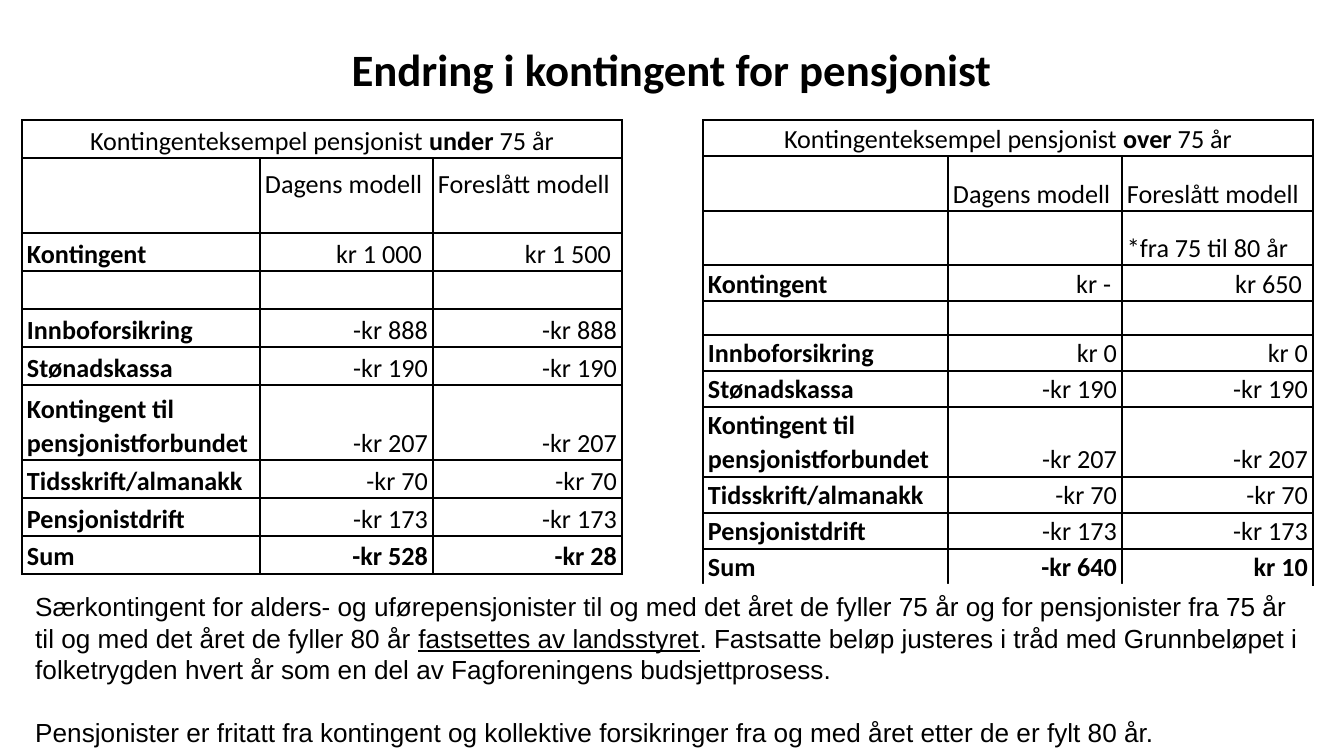
import pptx
import pptx.util
import pptx.dml.color
import pptx.enum.shapes
import pptx.enum.text
import lxml.etree

PX = 914400 / 134.4
ALIGN = pptx.enum.text.PP_ALIGN
ANCHOR = pptx.enum.text.MSO_ANCHOR
BLACK = "000000"
WHITE = "FFFFFF"
NAMESPACE = "{http://schemas.openxmlformats.org/drawingml/2006/main}"


def color(value):
    return pptx.dml.color.RGBColor.from_string(value)


def add_run(paragraph, text, size=14, font="Calibri", bold=False, underline=False):
    run = paragraph.add_run()
    run.text = text
    run.font.size = pptx.util.Pt(size)
    run.font.name = font
    run.font.bold = bold
    run.font.underline = underline
    run.font.color.rgb = color(BLACK)


presentation = pptx.Presentation()
presentation.slide_width = round(1344 * PX)
presentation.slide_height = round(756 * PX)
slide = presentation.slides.add_slide(presentation.slide_layouts[5])

title = slide.shapes.title
title.left, title.top, title.width, title.height = [round(n * PX) for n in (243, 35, 857, 67)]
title.text_frame.vertical_anchor = ANCHOR.MIDDLE
paragraph = title.text_frame.paragraphs[0]
paragraph.alignment = ALIGN.CENTER
add_run(paragraph, "Endring i kontingent for pensjonist", size=24, bold=True)

shared_rows = [
    ["Stønadskassa", "-kr 190", "-kr 190"],
    ["Kontingent til pensjonistforbundet", "-kr 207", "-kr 207"],
    ["Tidsskrift/almanakk", "-kr 70", "-kr 70"],
    ["Pensjonistdrift", "-kr 173", "-kr 173"],
]
under_rows = [
    ["", "Dagens modell\v", "Foreslått modell\v"],
    ["Kontingent", " kr 1 000 ", " kr 1 500 "],
    ["", "", ""],
    ["Innboforsikring", "-kr 888", "-kr 888"],
    *shared_rows,
    ["Sum", "-kr 528", "-kr 28"],
]
over_rows = [
    ["", "Dagens modell", "Foreslått modell"],
    ["", "", "*fra 75 til 80 år"],
    ["Kontingent", " kr - ", " kr 650 "],
    ["", "", ""],
    ["Innboforsikring", "kr 0", "kr 0"],
    *shared_rows,
    ["Sum", "-kr 640", "kr 10"],
]
tables = [
    ("under", 22, [238, 173, 189], [38, 75, 38, 38, 38, 38, 75, 38, 38, 38], under_rows),
    ("over", 703, [245, 174, 191], [36, 55, 54, 36, 34, 36, 36, 70, 36, 36, 36], over_rows),
]

for age_group, left, widths, heights, rows in tables:
    table = slide.shapes.add_table(
        len(heights), len(widths), round(left * PX), round(120 * PX),
        round(sum(widths) * PX), round(sum(heights) * PX)).table
    table.first_row = False
    table.horz_banding = False
    for column, width in zip(table.columns, widths):
        column.width = round(width * PX)
    for row, height in zip(table.rows, heights):
        row.height = round(height * PX)
    table.cell(0, 0).merge(table.cell(0, 2))

    for row_index, texts in enumerate([["", "", ""], *rows]):
        for column_index, text in enumerate(texts):
            cell = table.cell(row_index, column_index)
            cell.margin_left = cell.margin_right = round(5 * PX)
            cell.margin_top = cell.margin_bottom = round(1 * PX)
            cell.vertical_anchor = ANCHOR.BOTTOM
            properties = cell._tc.get_or_add_tcPr()
            for side in ("lnL", "lnR", "lnT", "lnB"):
                line = lxml.etree.SubElement(properties, NAMESPACE + side, w="12700")
                fill = lxml.etree.SubElement(line, NAMESPACE + "solidFill")
                lxml.etree.SubElement(fill, NAMESPACE + "srgbClr", val=BLACK)
            cell.fill.background()

            paragraph = cell.text_frame.paragraphs[0]
            paragraph.line_spacing = 1.07
            paragraph.space_after = pptx.util.Pt(8)
            if row_index == 0 and column_index == 0:
                paragraph.alignment = ALIGN.CENTER
                add_run(paragraph, "Kontingenteksempel pensjonist ")
                add_run(paragraph, age_group, bold=True)
                add_run(paragraph, " 75 år")
            elif text:
                if "kr " in text:
                    paragraph.alignment = ALIGN.RIGHT
                add_run(paragraph, text.rstrip("\v"), bold=column_index == 0 or texts[0] == "Sum")
                if text.endswith("\v"):
                    paragraph.add_line_break()
            end = lxml.etree.SubElement(paragraph._p, NAMESPACE + "endParaRPr", sz="1400")
            lxml.etree.SubElement(end, NAMESPACE + "latin", typeface="Calibri")

note = slide.shapes.add_shape(
    pptx.enum.shapes.MSO_SHAPE.RECTANGLE,
    round(22 * PX), round(584 * PX), round(1290 * PX), round(172 * PX))
note.shadow.inherit = False
note.fill.solid()
note.fill.fore_color.rgb = color(WHITE)
note.line.fill.background()
note.text_frame.word_wrap = True
note.text_frame.vertical_anchor = ANCHOR.TOP
paragraph = note.text_frame.paragraphs[0]
paragraph.alignment = ALIGN.LEFT
add_run(paragraph, "Særkontingent for alders- og uførepensjonister til og med det året de fyller 75 år "
        "og for pensjonister fra 75 år til og med det året de fyller 80 år ", font="Arial")
add_run(paragraph, "fastsettes av landsstyret", font="Arial", underline=True)
add_run(paragraph, ". Fastsatte beløp justeres i tråd med Grunnbeløpet i folketrygden hvert år "
        "som en del av Fagforeningens budsjettprosess.", font="Arial")
paragraph = note.text_frame.add_paragraph()
paragraph.alignment = ALIGN.LEFT
paragraph.space_before = pptx.util.Pt(17)
add_run(paragraph, "Pensjonister er fritatt fra kontingent og kollektive forsikringer fra og med "
        "året etter de er fylt 80 år.", font="Arial")

presentation.save("out.pptx")
